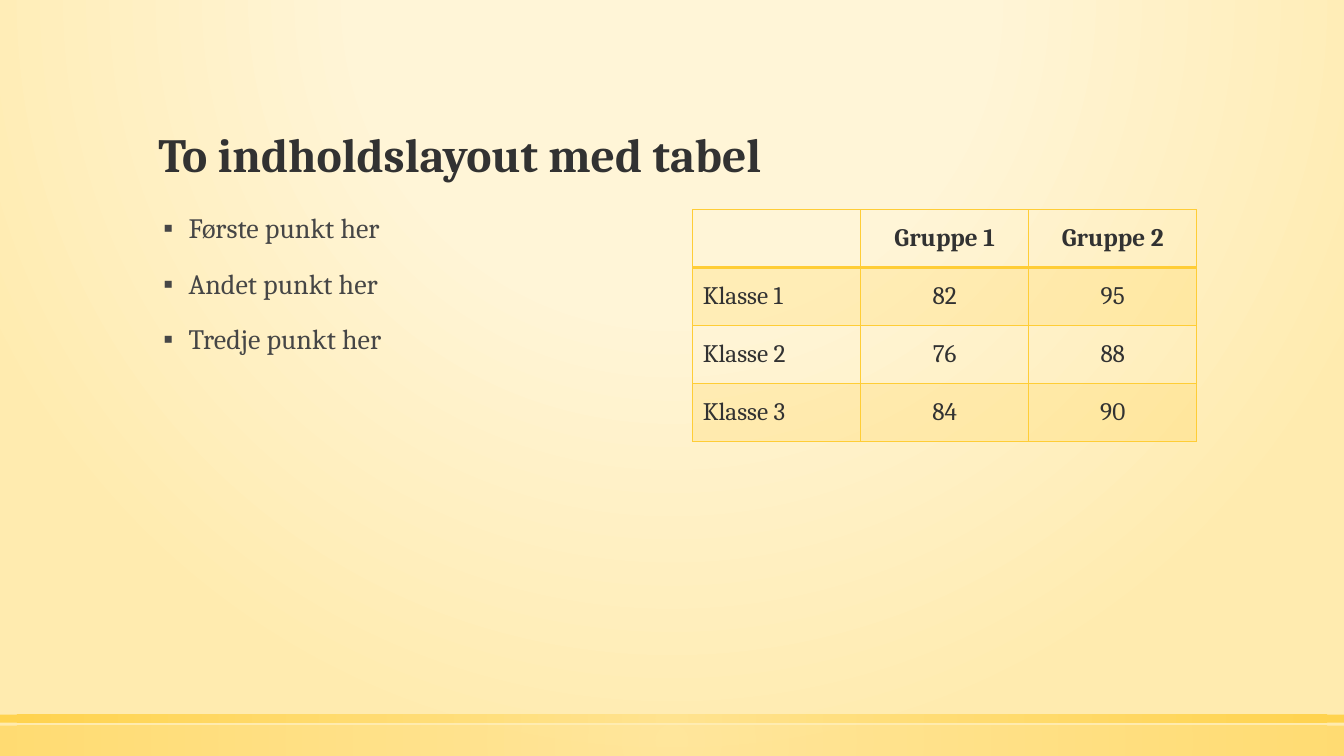
import pptx
import pptx.dml.color
import pptx.enum.shapes
import pptx.enum.text
import pptx.oxml
import pptx.oxml.ns
import pptx.util
from lxml import etree

Inches = pptx.util.Inches
Pt = pptx.util.Pt
qn = pptx.oxml.ns.qn
ALIGN = pptx.enum.text.PP_ALIGN
ANCHOR = pptx.enum.text.MSO_ANCHOR

FONT = "Cambria"
GOLD, DARK, GREY = "FFCD36", "323232", "464646"
POINTS = ["Første punkt her", "Andet punkt her", "Tredje punkt her"]
SCORES = [
    ["", "Gruppe 1", "Gruppe 2"],
    ["Klasse 1", "82", "95"],
    ["Klasse 2", "76", "88"],
    ["Klasse 3", "84", "90"],
]


def color(hex_value):
    return pptx.dml.color.RGBColor.from_string(hex_value)


def add_child(parent, tag, **attributes):
    """Append a child element with the given attributes."""
    child = etree.SubElement(parent, qn(tag))
    for name, value in attributes.items():
        child.set(name, str(value))
    return child


def set_radial_gradient(owner, fill, stops, focus):
    """Stops are (position, colour, opacity); numbers are percentages."""
    fill.gradient()
    gradient = owner.find(".//" + qn("a:gradFill"))
    for child in list(gradient):
        gradient.remove(child)
    stop_list = add_child(gradient, "a:gsLst")
    for position, hex_value, opacity in stops:
        stop = add_child(stop_list, "a:gs", pos=position * 1000)
        stop_color = add_child(stop, "a:srgbClr", val=hex_value)
        if opacity < 100:
            add_child(stop_color, "a:alpha", val=opacity * 1000)
    circle = add_child(gradient, "a:path", path="circle")
    sides = {side: value * 1000 for side, value in zip("ltrb", focus)}
    add_child(circle, "a:fillToRect", **sides)


def write_text(paragraph, text, size=18, hex_value=DARK, bold=False,
               align=ALIGN.LEFT, line_spacing=None, space_before=0):
    paragraph.alignment = align
    paragraph.space_before = Pt(space_before)
    if line_spacing:
        paragraph.line_spacing = line_spacing
    run = paragraph.add_run()
    run.text = text
    run.font.name = FONT
    run.font.size = Pt(size)
    run.font.bold = bold
    run.font.color.rgb = color(hex_value)


def place(shape, box):
    shape.left, shape.top, shape.width, shape.height = map(Inches, box)


def prepare_frame(placeholder, box, anchor):
    place(placeholder, box)
    frame = placeholder.text_frame
    frame.word_wrap = True
    frame.auto_size = pptx.enum.text.MSO_AUTO_SIZE.NONE
    frame.vertical_anchor = anchor
    return frame


def add_bar(slide, box, opacity):
    bar = slide.shapes.add_shape(
        pptx.enum.shapes.MSO_SHAPE.RECTANGLE, *map(Inches, box))
    bar.shadow.inherit = False
    bar.line.fill.background()
    stops = [(0, "FFE186", opacity), (100, GOLD, opacity)]
    set_radial_gradient(bar._element, bar.fill, stops, (50, 50, 50, 50))


def add_footer(slide, box):
    left, top, width, height = box
    add_bar(slide, (left, top + 0.11, width, height - 0.11), 50)
    add_bar(slide, (left, top, width, 0.08), 80)


def fill_title(slide, box):
    frame = prepare_frame(slide.shapes.title, box, ANCHOR.BOTTOM)
    write_text(frame.paragraphs[0], "To indholdslayout med tabel", size=34,
               bold=True, line_spacing=0.9)


def fill_list(slide, box):
    frame = prepare_frame(slide.placeholders[1], box, ANCHOR.TOP)
    for index, text in enumerate(POINTS):
        paragraph = frame.add_paragraph() if index else frame.paragraphs[0]
        write_text(paragraph, text, size=20, hex_value=GREY,
                   line_spacing=0.9, space_before=18)
        properties = paragraph._p.get_or_add_pPr()
        properties.set("marL", str(Inches(0.3)))
        properties.set("indent", str(Inches(-0.25)))
        add_child(properties, "a:buFont", typeface="Arial")
        add_child(properties, "a:buChar", char="▪")


def format_cell(cell, row):
    # Band every second row below the header
    if row % 2:
        cell.fill.solid()
        cell.fill.fore_color.rgb = color(GOLD)
        band = cell._tc.find(".//" + qn("a:srgbClr"))
        add_child(band, "a:alpha", val=20000)
    else:
        cell.fill.background()
    # Borders, with a heavier rule under the header
    properties = cell._tc.get_or_add_tcPr()
    for index, side in enumerate(("L", "R", "T", "B")):
        heavy = (row, side) in ((0, "B"), (1, "T"))
        line = add_child(properties, "a:ln" + side, w=Pt(2 if heavy else 1))
        line_fill = add_child(line, "a:solidFill")
        add_child(line_fill, "a:srgbClr", val=GOLD)
        properties.insert(index, line)


def add_scores(slide, box):
    table = slide.shapes.add_table(
        len(SCORES), len(SCORES[0]), *map(Inches, box)).table
    table.horz_banding = False
    for row, values in enumerate(SCORES):
        for column, text in enumerate(values):
            cell = table.cell(row, column)
            cell.vertical_anchor = ANCHOR.MIDDLE
            format_cell(cell, row)
            if text:
                write_text(cell.text_frame.paragraphs[0], text, bold=row == 0,
                           align=ALIGN.CENTER if column else ALIGN.LEFT)


def build_slide(presentation):
    slide = presentation.slides.add_slide(presentation.slide_layouts[1])
    stops = [(0, "FFF5D7", 59), (40, "FFF5D7", 66), (100, "FFEBAF", 100)]
    set_radial_gradient(slide._element, slide.background.fill, stops,
                        (50, -80, 50, 180))
    add_footer(slide, (0, 7.09, 13.33, 0.41))
    fill_title(slide, (1.47, 0.51, 10.4, 1.35))
    fill_list(slide, (1.47, 2.08, 5, 4.51))
    add_scores(slide, (6.87, 2.08, 5, 2.3))


def main():
    presentation = pptx.Presentation()
    presentation.slide_width = Inches(13.33)
    presentation.slide_height = Inches(7.5)
    build_slide(presentation)
    presentation.save("out.pptx")


if __name__ == "__main__":
    main()
